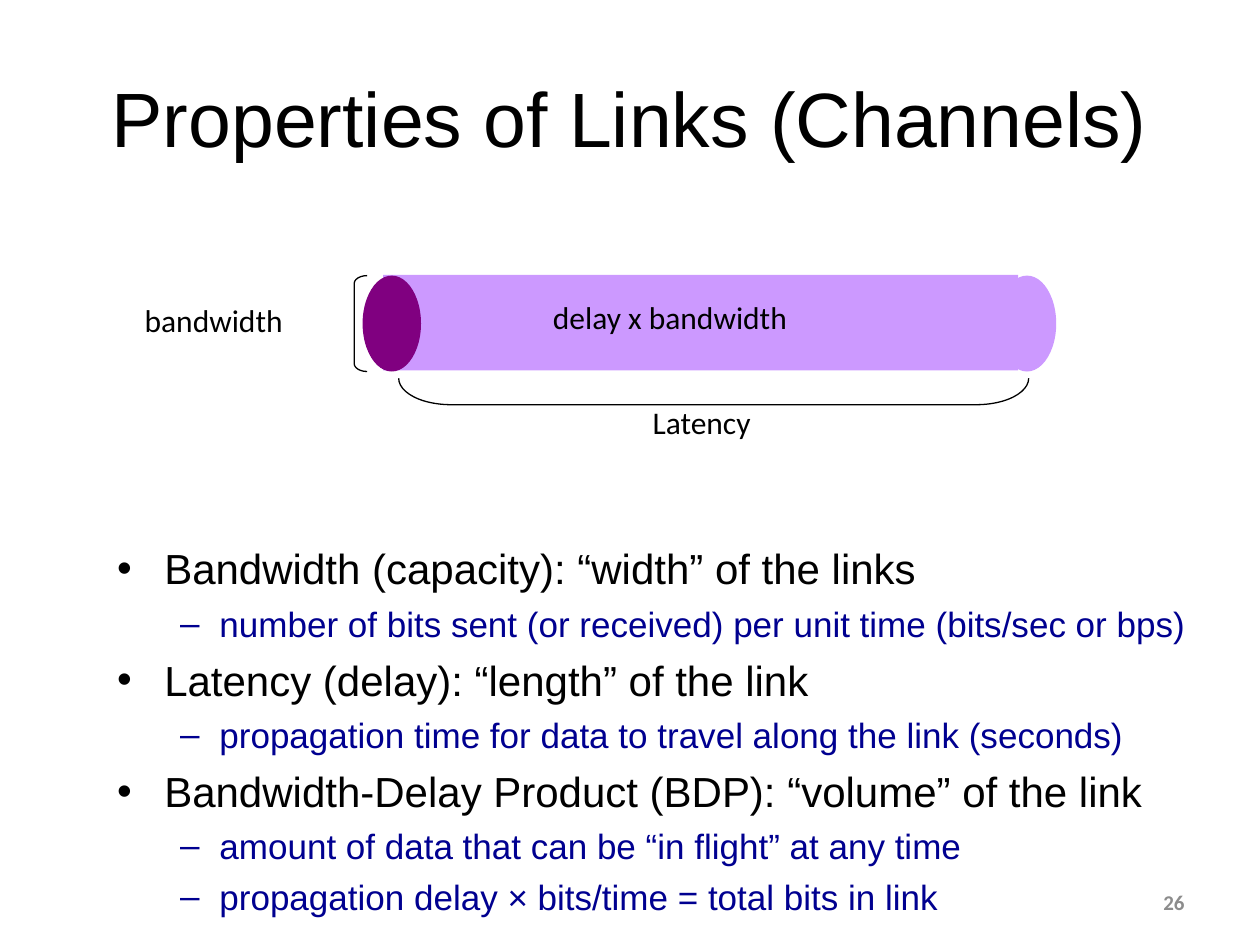
"""Build a slide on the bandwidth and latency of links."""
from lxml import etree
from pptx import Presentation
from pptx.dml.color import RGBColor
from pptx.enum import shapes, text
from pptx.oxml import ns
from pptx.util import Pt

BLACK = RGBColor(0x00, 0x00, 0x00)
NAVY = RGBColor(0x00, 0x00, 0x90)
GRAY = RGBColor(0x8C, 0x8C, 0x8C)
LILAC = RGBColor(0xCC, 0x99, 0xFF)
PURPLE = RGBColor(0x80, 0x00, 0x80)

deck = Presentation()
deck.slide_width, deck.slide_height = Pt(720), Pt(540)
slide = deck.slides.add_slide(deck.slide_layouts[6])
kind = shapes.MSO_SHAPE
side = text.PP_ALIGN
hold = text.MSO_ANCHOR


def write(para, words, ink, look):
    run = para.add_run()
    run.text = words
    run.font.color.rgb = ink
    for key, val in look.items():
        setattr(run.font, key, val)


def frame(box, anchor):
    area = slide.shapes.add_textbox(*map(Pt, box)).text_frame
    for key, val in {"word_wrap": True, "vertical_anchor": anchor}.items():
        setattr(area, key, val)
    return area


pipe = [
    (kind.OVAL, (570.2, 157.5, 33.4, 54.8), LILAC),
    (kind.RECTANGLE, (218.9, 157.1, 363, 54.6), LILAC),
    (kind.OVAL, (207.2, 157.5, 33.4, 54.8), PURPLE),
]
for form, box, ink in pipe:
    part = slide.shapes.add_shape(form, *map(Pt, box))
    part.shadow.inherit = False
    part.fill.solid()
    part.fill.fore_color.rgb = ink
    part.line.fill.background()

spans = [
    ((202.4, 157.5, 7.4, 54.8), 0.61, 0),
    ((400.3, 43.7, 15.1, 360), 1.98, 270),
]
for box, curve, turn in spans:
    brace = slide.shapes.add_shape(kind.LEFT_BRACKET, *map(Pt, box))
    brace.shadow.inherit = False
    brace.adjustments[0] = curve
    brace.rotation = turn
    brace.fill.background()
    brace.line.color.rgb = BLACK
    brace.line.width = Pt(0.75)

head = {"name": "Arial", "size": Pt(44)}
label = {"name": "Calibri", "size": Pt(18)}
page = {"name": "Calibri", "size": Pt(12), "bold": True}
notes = [
    ("Properties of Links (Channels)", (36, 21.6, 648, 90), hold.MIDDLE, side.CENTER, BLACK, head),
    ("bandwidth", (75.6, 168.5, 122.4, 31), hold.TOP, side.LEFT, BLACK, label),
    ("Latency", (365.8, 226.8, 99.4, 31), hold.TOP, side.LEFT, BLACK, label),
    ("delay x bandwidth", (308.9, 167, 218.2, 31), hold.TOP, side.LEFT, BLACK, label),
    ("26", (516.2, 501.1, 167.8, 28.8), hold.MIDDLE, side.RIGHT, GRAY, page),
]
for words, box, anchor, align, ink, look in notes:
    para = frame(box, anchor).paragraphs[0]
    para.alignment = align
    write(para, words, ink, look)

ranks = [
    {"mark": "•", "left": 27, "hang": -27, "size": 24, "gap": 5.8, "ink": BLACK},
    {"mark": "–", "left": 58.5, "hang": -22.5, "size": 20, "gap": 5, "ink": NAVY},
]
points = [
    (0, "Bandwidth (capacity): “width” of the links"),
    (1, "number of bits sent (or received) per unit time (bits/sec or bps)"),
    (0, "Latency (delay): “length” of the link"),
    (1, "propagation time for data to travel along the link (seconds)"),
    (0, "Bandwidth-Delay Product (BDP): “volume” of the link"),
    (1, "amount of data that can be “in flight” at any time"),
    (1, "propagation delay × bits/time = total bits in link"),
]
body = frame((59.8, 306.7, 671.8, 233.3), hold.TOP)
for row, (level, words) in enumerate(points):
    rank = ranks[level]
    para = body.add_paragraph() if row else body.paragraphs[0]
    para.level = level
    para.space_before = Pt(rank["gap"])
    props = para._p.get_or_add_pPr()
    props.set("marL", str(Pt(rank["left"])))
    props.set("indent", str(Pt(rank["hang"])))
    etree.SubElement(props, ns.qn("a:buFont"), typeface="Arial")
    etree.SubElement(props, ns.qn("a:buChar"), char=rank["mark"])
    write(para, words, rank["ink"], {"name": "Arial", "size": Pt(rank["size"])})

deck.save("out.pptx")
